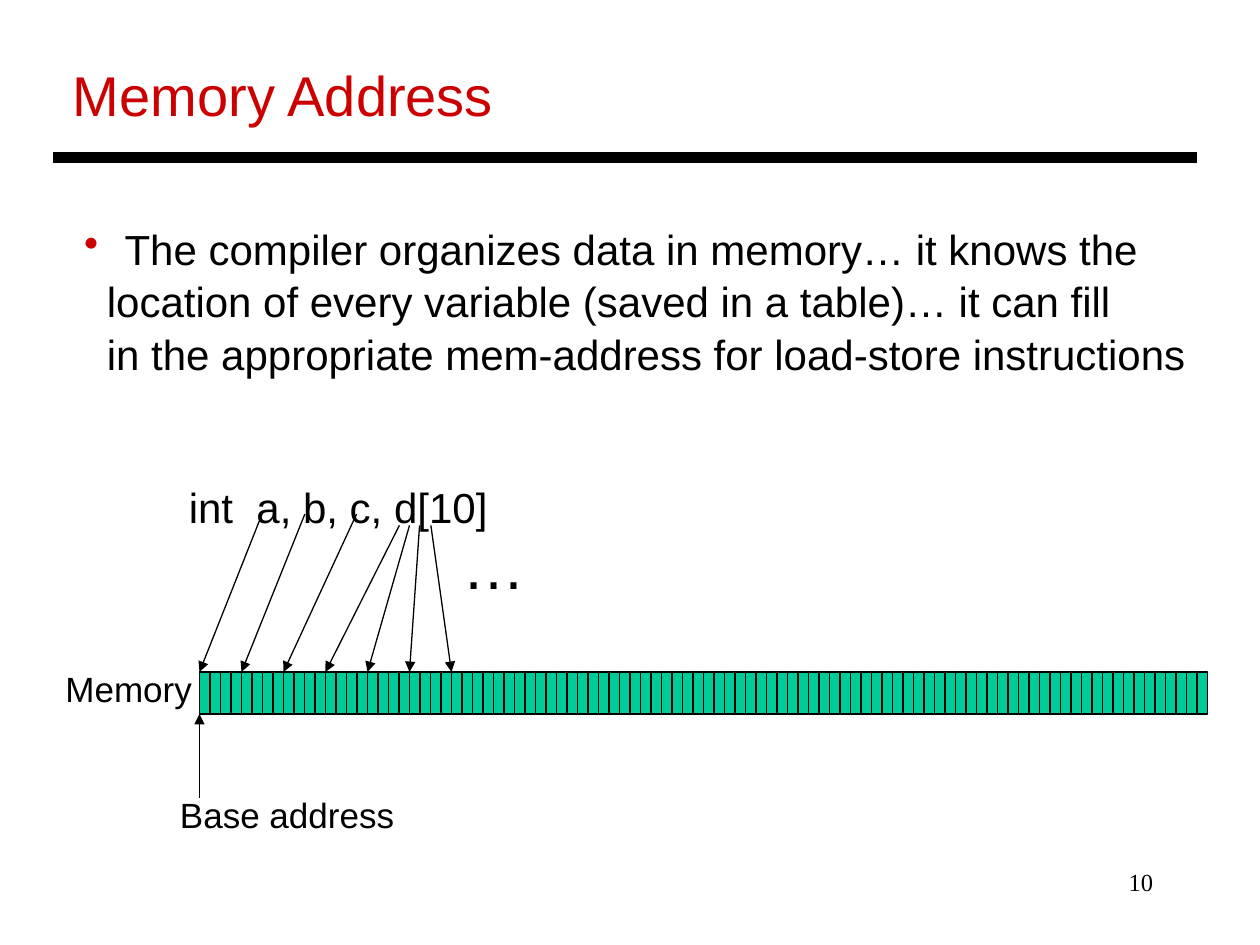
from lxml.etree import SubElement
from pptx import Presentation
from pptx.dml.color import RGBColor
from pptx.enum.shapes import MSO_CONNECTOR, MSO_SHAPE
from pptx.enum.text import MSO_AUTO_SIZE, PP_ALIGN
from pptx.oxml.ns import qn
from pptx.util import Inches, Pt

COLORS = {"ink": "000000", "accent": "CC0000", "cell": "00CC99"}

LABELS = [
    {"text": "10", "at": (7.17, 6.83, 2.08, 0.5), "size": 14,
     "face": "Times New Roman", "align": PP_ALIGN.RIGHT},
    {"text": "Memory Address", "at": (0.48, 0.43, 3.56, 0.63), "size": 32, "color": "accent"},
    {"text": "Memory", "at": (0.42, 5.25, 1.22, 0.43), "size": 20},
    {"text": "…", "at": (3.57, 4.13, 0.7, 0.7), "size": 36},
    {"text": "Base address", "at": (1.33, 6.25, 1.9, 0.43), "size": 20},
]

EXPLANATION_AT = (0.57, 1.71, 8.95, 2.5)
EXPLANATION = [
    {"text": "The compiler organizes data in memory… it knows the",
     "margin": 0.32, "indent": -0.32, "bullet": "•"},
    {"text": "location of every variable (saved in a table)… it can fill", "margin": 0.18},
    {"text": "in the appropriate mem-address for load-store instructions", "margin": 0.18},
    {"text": "int  a, b, c, d[10]", "margin": 0.83, "before": 57.6},
]

CELL_COUNT, CELLS_PER_INT = 96, 4
CELL_WIDTH, CELL_HEIGHT = 1 / 12, 1 / 3
MEMORY_LEFT, MEMORY_TOP = 19 / 12, 16 / 3
VARIABLE_STARTS = [(2.08, 4.08), (2.42, 4.08), (2.83, 4.08),
                   (3.17, 4.17), (3.25, 4.17), (3.33, 4.17), (3.42, 4.17)]


def color(name):
    return RGBColor.from_string(COLORS[name])


def set_font(paragraph, size, face="Arial", ink="ink"):
    for key, value in {"size": Pt(size), "name": face}.items():
        setattr(paragraph.font, key, value)
    paragraph.font.color.rgb = color(ink)


def add_frame(slide, at, wrap=False):
    frame = slide.shapes.add_textbox(*map(Inches, at)).text_frame
    frame.word_wrap = wrap
    frame.auto_size = MSO_AUTO_SIZE.NONE if wrap else MSO_AUTO_SIZE.SHAPE_TO_FIT_TEXT
    return frame


def add_line(slide, start, end, width=0.75, arrow=True):
    line = slide.shapes.add_connector(MSO_CONNECTOR.STRAIGHT, *map(Inches, start + end))
    line.line.color.rgb = color("ink")
    line.line.width = Pt(width)
    properties = line.line._get_or_add_ln()
    if arrow:
        SubElement(properties, qn("a:tailEnd"), type="triangle")
    SubElement(properties.getparent(), qn("a:effectLst"))


def add_label(slide, label):
    frame = add_frame(slide, label["at"], wrap="align" in label)
    paragraph = frame.paragraphs[0]
    paragraph.text = label["text"]
    paragraph.alignment = label.get("align", PP_ALIGN.LEFT)
    set_font(paragraph, label["size"], label.get("face", "Arial"), label.get("color", "ink"))


def add_explanation(slide):
    frame = add_frame(slide, EXPLANATION_AT)
    for number, entry in enumerate(EXPLANATION):
        paragraph = frame.add_paragraph() if number else frame.paragraphs[0]
        paragraph.text = entry["text"]
        paragraph.line_spacing = 1.04
        if "before" in entry:
            paragraph.space_before = Pt(entry["before"])
        properties = paragraph._p.get_or_add_pPr()
        for key, name in {"margin": "marL", "indent": "indent"}.items():
            properties.set(name, str(Inches(entry.get(key, 0))))
        if "bullet" in entry:
            SubElement(SubElement(properties, qn("a:buClr")), qn("a:srgbClr"), val=COLORS["accent"])
            SubElement(properties, qn("a:buChar"), char=entry["bullet"])
        set_font(paragraph, 24)


def add_memory(slide):
    for index in range(CELL_COUNT):
        left = MEMORY_LEFT + index * CELL_WIDTH
        cell = slide.shapes.add_shape(
            MSO_SHAPE.RECTANGLE, *map(Inches, (left, MEMORY_TOP, CELL_WIDTH, CELL_HEIGHT)))
        cell.shadow.inherit = False
        cell.fill.solid()
        cell.fill.fore_color.rgb = color("cell")
        cell.line.color.rgb = color("ink")
        cell.line.width = Pt(0.75)


def add_pointers(slide):
    for index, start in enumerate(VARIABLE_STARTS):
        target = MEMORY_LEFT + index * CELLS_PER_INT * CELL_WIDTH
        add_line(slide, start, (target, MEMORY_TOP))
    add_line(slide, (MEMORY_LEFT, 6.33), (MEMORY_LEFT, MEMORY_TOP + CELL_HEIGHT))


def main():
    deck = Presentation()
    deck.slide_width, deck.slide_height = Inches(10), Inches(7.5)
    slide = deck.slides.add_slide(deck.slide_layouts[6])
    add_line(slide, (0.42, 1.25), (9.5, 1.25), width=6, arrow=False)
    add_explanation(slide)
    add_memory(slide)
    add_pointers(slide)
    for label in LABELS:
        add_label(slide, label)
    deck.save("out.pptx")


if __name__ == "__main__":
    main()
